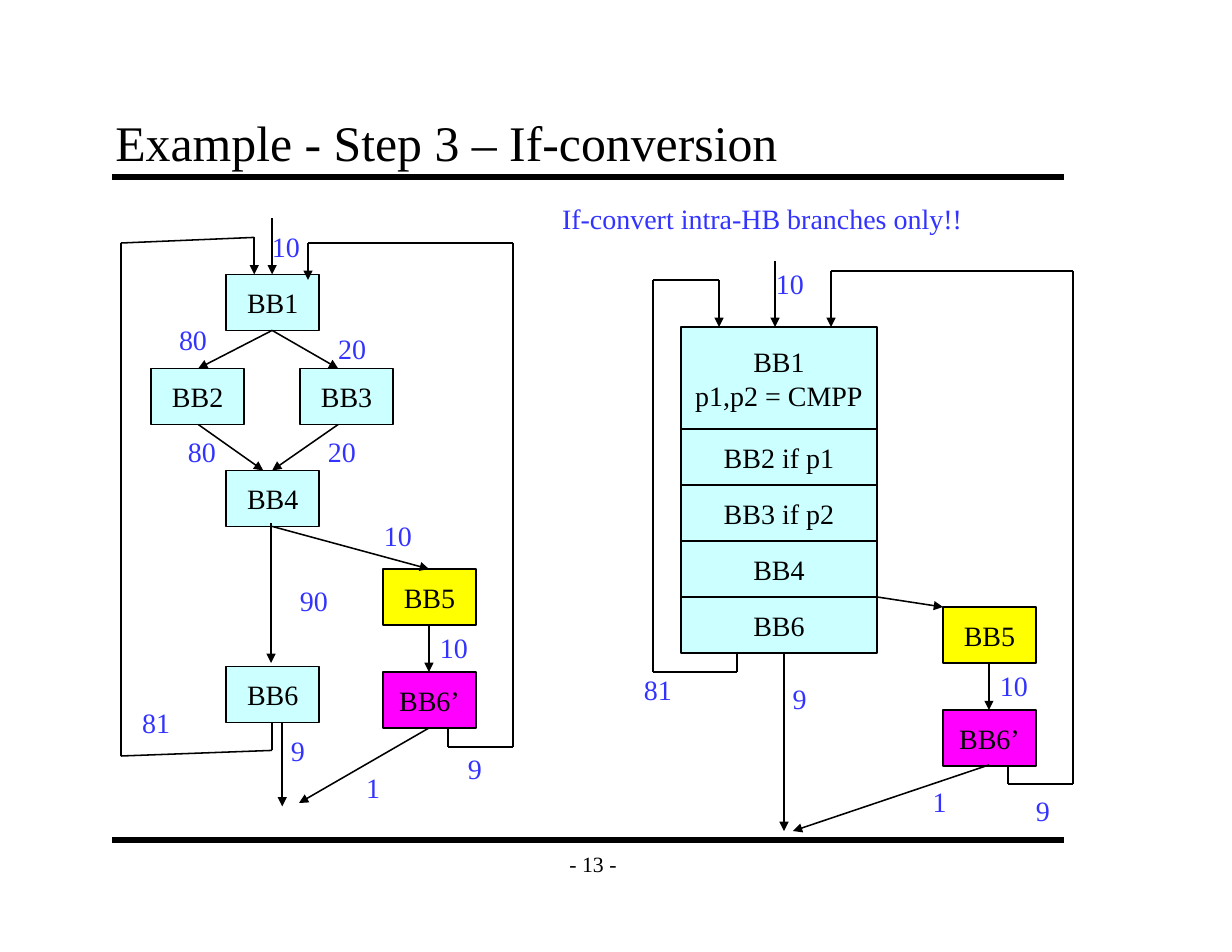
from itertools import pairwise

from lxml.etree import SubElement
from pptx import Presentation
from pptx.dml.color import RGBColor
from pptx.enum.shapes import MSO_CONNECTOR as Connector, MSO_SHAPE as Shape
from pptx.enum.text import MSO_ANCHOR as Anchor, MSO_AUTO_SIZE as AutoSize, PP_ALIGN as Align
from pptx.oxml.ns import qn
from pptx.util import Inches, Pt

BLACK, BLUE = "000000", "3333FF"
CYAN, YELLOW, MAGENTA = "CCFFFF", "FFFF00", "FF00FF"
BLOCK_W, BLOCK_H = 0.83, 0.5
LABEL_H = 0.4


def rgb(hex_color):
    return RGBColor.from_string(hex_color)


def apply_format(target, values):
    for name, value in values.items():
        setattr(target, name, value)


def write(shape, text, size=18, color=BLACK, align=Align.LEFT, **frame_format):
    frame = shape.text_frame
    frame.text = text
    apply_format(frame, {"word_wrap": False, **frame_format})
    for paragraph in frame.paragraphs:
        paragraph.alignment = align
        apply_format(paragraph.font, {"name": "Times New Roman", "size": Pt(size)})
        paragraph.font.color.rgb = rgb(color)


def add_text(slide, x, y, width, height, text, **text_format):
    box = slide.shapes.add_textbox(Inches(x), Inches(y), Inches(width), Inches(height))
    write(box, text, **text_format)


def add_label(slide, x, y, text, width=None):
    width = width or (0.45 if len(text) > 1 else 0.33)
    add_text(slide, x, y, width, LABEL_H, text, color=BLUE,
             auto_size=AutoSize.SHAPE_TO_FIT_TEXT)


def add_block(slide, x, y, text, fill=CYAN, width=BLOCK_W, height=BLOCK_H):
    block = slide.shapes.add_shape(
        Shape.RECTANGLE, Inches(x), Inches(y), Inches(width), Inches(height))
    block.shadow.inherit = False
    block.fill.solid()
    block.fill.fore_color.rgb = rgb(fill)
    block.line.color.rgb = rgb(BLACK)
    block.line.width = Pt(1)
    write(block, text, align=Align.CENTER, vertical_anchor=Anchor.MIDDLE)


def add_line(slide, start, end, width=1, arrow=False):
    line = slide.shapes.add_connector(
        Connector.STRAIGHT, *(Inches(value) for value in (*start, *end)))
    line.line.color.rgb = rgb(BLACK)
    line.line.width = Pt(width)
    if arrow:
        SubElement(line.line._get_or_add_ln(), qn("a:tailEnd"), type="triangle")
    SubElement(line._element.spPr, qn("a:effectLst"))


def add_edge(slide, left, top, *points):
    """Straight segments through the points, with an arrowhead on the last."""
    placed = [(left + x, top + y) for x, y in points]
    for start, end in pairwise(placed):
        add_line(slide, start, end, arrow=end == placed[-1])


def add_frame(slide, left, top, width):
    # Title between the page edge and the upper rule
    add_text(slide, left - 0.08, top - 0.66, width, 0.67,
             "Example - Step 3 – If-conversion", size=32, word_wrap=True,
             vertical_anchor=Anchor.BOTTOM, margin_left=Inches(0.11),
             margin_right=Inches(0.11), margin_top=Inches(0.06),
             margin_bottom=Inches(0.06))
    # Upper and lower rules
    for y in (top, top + 5.92):
        add_line(slide, (left, y), (left + width, y), width=4)
    # Page number
    add_text(slide, left + 3.92, top + 5.92, 0.75, 0.42, "- 13 -", size=14,
             align=Align.CENTER, vertical_anchor=Anchor.MIDDLE)


def add_duplicated_tail(slide, left, top):
    """BB5 above the copied block BB6’."""
    add_block(slide, left, top, "BB5", YELLOW)
    add_block(slide, left, top + 0.92, "BB6’", MAGENTA)
    add_edge(slide, left, top, (0.41, BLOCK_H), (0.41, 0.92))
    add_label(slide, left + 0.41, top + BLOCK_H, "10")


def add_flow_graph(slide, left, top):
    # Blocks
    for text, x, y in (("BB1", 1.02, 0.45), ("BB2", 0.35, 1.29), ("BB3", 1.68, 1.29),
                       ("BB4", 1.02, 2.2), ("BB6", 1.02, 3.95)):
        add_block(slide, left + x, top + y, text)
    add_duplicated_tail(slide, left + 2.42, top + 3.08)

    # Edges
    for points in (
        ((1.43, -0.05), (1.43, 0.45)),                     # entry
        ((1.43, 0.95), (0.77, 1.29)),                      # BB1 to BB2
        ((1.43, 0.95), (2.02, 1.29)),                      # BB1 to BB3
        ((0.77, 1.79), (1.35, 2.2)),                       # BB2 to BB4
        ((2.02, 1.79), (1.43, 2.2)),                       # BB3 to BB4
        ((1.43, 2.7), (2.83, 3.08)),                       # BB4 to BB5
        ((1.42, 2.67), (1.42, 3.92)),                      # BB4 to BB6
        ((1.52, 4.45), (1.52, 5.2)),                       # BB6 exit
        ((2.83, 4.5), (1.67, 5.17)),                       # BB6’ exit
        ((1.43, 4.45), (1.43, 4.7), (0.08, 4.75), (0.08, 0.17),
         (1.27, 0.12), (1.27, 0.45)),                      # BB6 back to BB1
        ((3, 4.5), (3, 4.67), (3.58, 4.67), (3.58, 0.17),
         (1.75, 0.17), (1.75, 0.5)),                       # BB6’ back to BB1
    ):
        add_edge(slide, left, top, *points)

    # Edge weights
    for text, x, y in (("10", 1.33, 0), ("80", 0.5, 0.83), ("20", 1.92, 0.91),
                       ("80", 0.58, 1.83), ("20", 1.83, 1.83), ("10", 2.33, 2.58),
                       ("90", 1.58, 3.16), ("81", 0.17, 4.25), ("9", 1.5, 4.5),
                       ("9", 3.08, 4.66), ("1", 2.17, 4.83)):
        add_label(slide, left + x, top + y, text)


def add_hyperblock(slide, left, top):
    # Stacked blocks
    add_block(slide, left + 0.58, top + 0.92, "BB1\np1,p2 = CMPP", width=1.75, height=0.92)
    for row, text in enumerate(("BB2 if p1", "BB3 if p2", "BB4", "BB6")):
        add_block(slide, left + 0.58, top + 1.83 + row * BLOCK_H, text, width=1.75)
    add_duplicated_tail(slide, left + 2.92, top + 3.42)

    # Edges
    for points in (
        ((1.42, 0.33), (1.42, 0.92)),                      # entry
        ((2.33, 3.33), (2.92, 3.42)),                      # BB4 to BB5
        ((1.5, 3.83), (1.5, 5.42)),                        # BB6 exit
        ((3.33, 4.83), (1.58, 5.42)),                      # BB6’ exit
        ((1.08, 3.83), (1.08, 4), (0.33, 4), (0.33, 0.5),
         (0.92, 0.5), (0.92, 0.92)),                       # BB6 back to BB1
        ((3.5, 4.83), (3.5, 5), (4.08, 5), (4.08, 0.42),
         (1.92, 0.42), (1.92, 0.92)),                      # BB6’ back to BB1
    ):
        add_edge(slide, left, top, *points)

    # Edge weights
    for text, x, y in (("10", 1.33, 0.33), ("81", 0.15, 3.96), ("9", 1.48, 4.04),
                       ("1", 2.73, 4.96), ("9", 3.65, 5.04)):
        add_label(slide, left + x, top + y, text)

    # Remark above the hyperblock
    add_label(slide, left - 0.58, top - 0.25, "If-convert intra-HB branches only!!", width=3.78)


def main():
    deck = Presentation()
    deck.slide_width, deck.slide_height = Inches(11), Inches(8.5)
    slide = deck.slides.add_slide(deck.slide_layouts[6])
    add_frame(slide, 1, 1.58, 8.5)
    add_flow_graph(slide, 1, 2)
    add_hyperblock(slide, 5.5, 2)
    deck.save("out.pptx")


if __name__ == "__main__":
    main()
